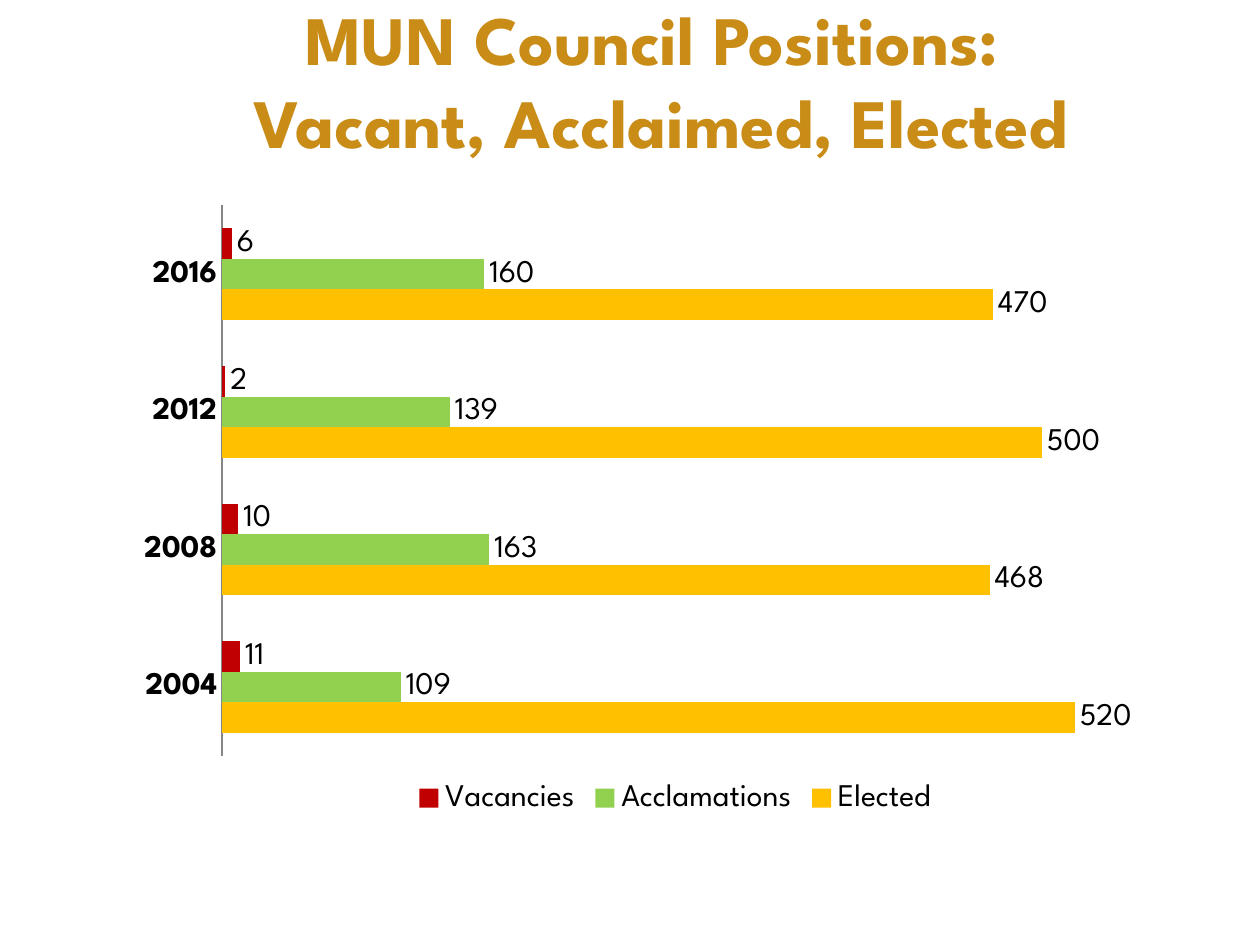
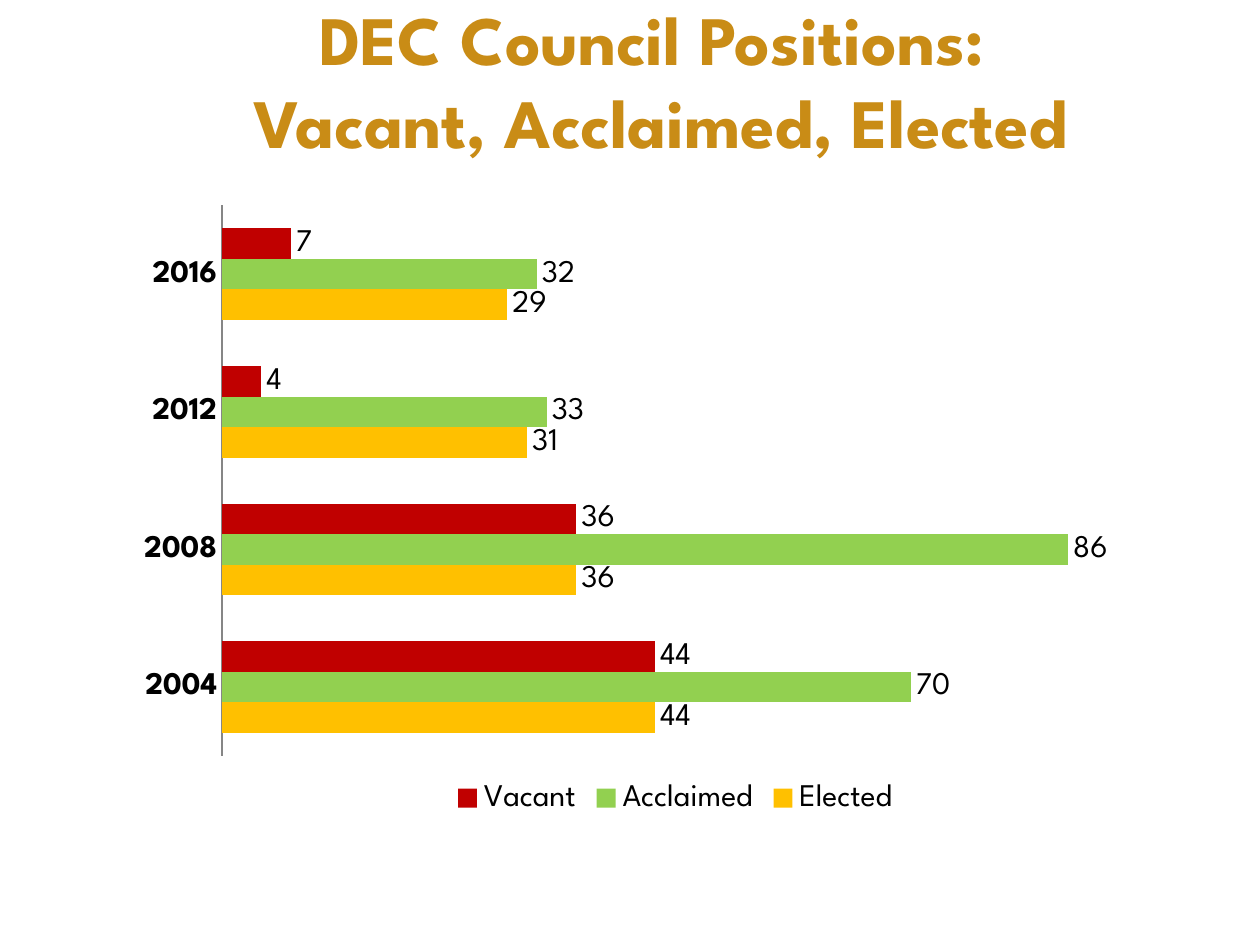
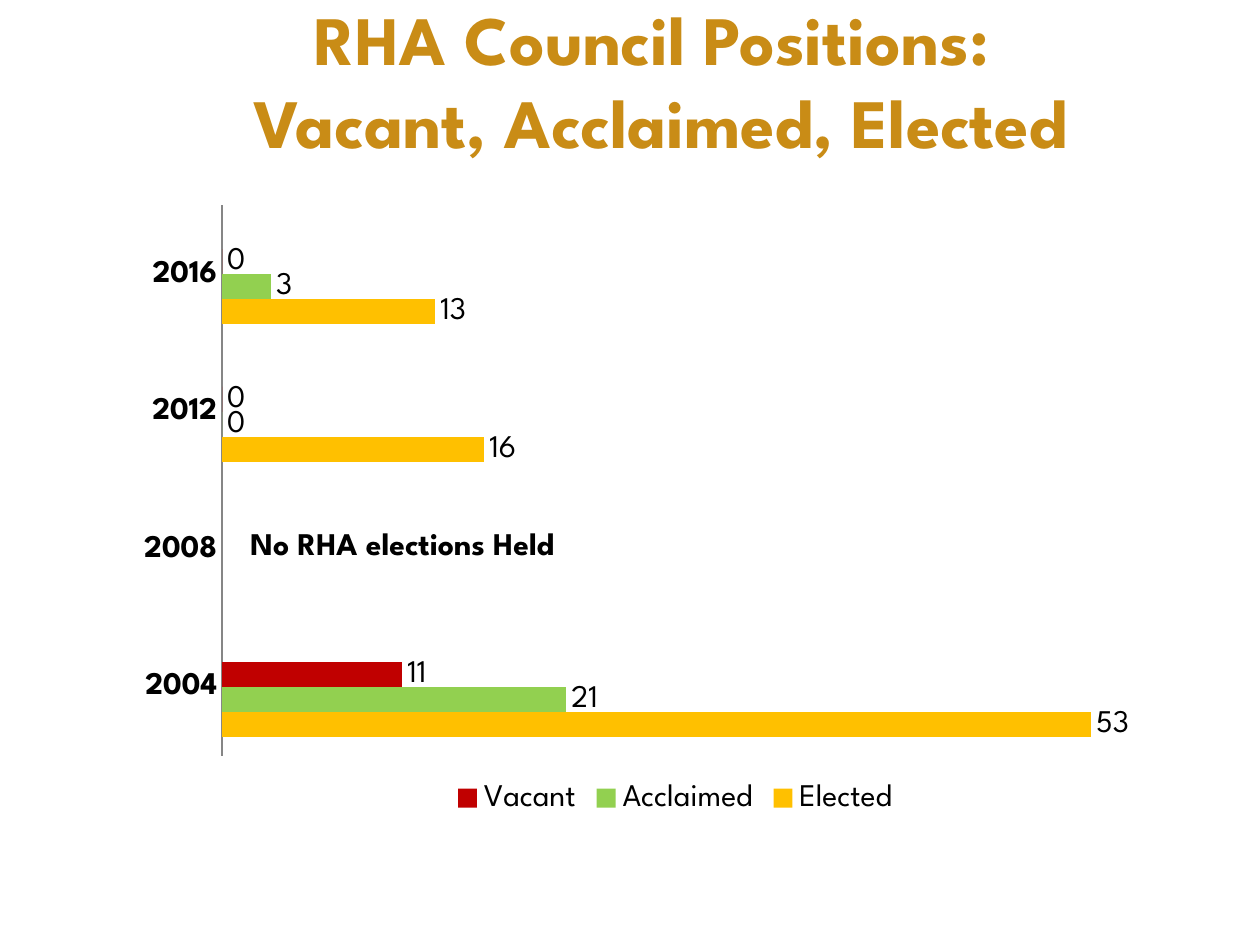
from dataclasses import dataclass

from lxml import etree
from pptx import Presentation
from pptx.chart.data import CategoryChartData
from pptx.dml.color import RGBColor
from pptx.enum.chart import XL_CHART_TYPE, XL_LABEL_POSITION, XL_LEGEND_POSITION, XL_TICK_MARK
from pptx.enum.text import MSO_ANCHOR, MSO_AUTO_SIZE, PP_ALIGN
from pptx.oxml.ns import qn
from pptx.util import Cm, Pt

BAR_CLUSTERED = XL_CHART_TYPE.BAR_CLUSTERED
OUTSIDE_END = XL_LABEL_POSITION.OUTSIDE_END
LEGEND_BOTTOM = XL_LEGEND_POSITION.BOTTOM
NO_TICKS = XL_TICK_MARK.NONE
MIDDLE = MSO_ANCHOR.MIDDLE
NO_AUTOFIT = MSO_AUTO_SIZE.NONE
CENTER = PP_ALIGN.CENTER

TYPEFACE = "League Spartan"
GOLD, BLACK, AXIS_GRAY = "C98C16", "000000", "868686"
SERIES_COLORS = ("FFC000", "92D050", "C00000", "8064A2")
YEARS = ("2004", "2008", "2012", "2016")
TITLE_BOX = (1.9, 0, 22.86, 3.18)
CHART_BOX = (2.46, 3.89, 22.3, 12.62)


@dataclass
class Council:
    """Election results of one council, oldest year first."""
    name: str
    results: dict
    axis_maximum: int
    note: str = ""


COUNCILS = (
    Council("MUN", {
        "Elected": (520, 468, 500, 470),
        "Acclamations": (109, 163, 139, 160),
        "Vacancies": (11, 10, 2, 6),
    }, 600),
    Council("DEC", {
        "Elected": (44, 36, 31, 29),
        "Acclaimed": (70, 86, 33, 32),
        "Vacant": (44, 36, 4, 7),
    }, 100),
    Council("RHA", {
        "Elected": (53, None, 16, 13),
        "Acclaimed": (21, None, 0, 3),
        "Vacant": (11, None, 0, 0),
        "#REF!": (None,) * len(YEARS),
    }, 60, "No RHA elections Held"),
)


def color(hex_code):
    """Return the colour for a hex string."""
    return RGBColor.from_string(hex_code)


def style_font(font, size, hex_code, bold=False):
    """Apply the deck typeface with a size, colour and weight."""
    font.name = TYPEFACE
    font.size = Pt(size)
    font.bold = bold
    font.color.rgb = color(hex_code)


def add_heading(slide, box, council_name):
    """Place the two-line title."""
    heading = slide.shapes.title
    heading.left, heading.top, heading.width, heading.height = map(Cm, box)
    frame = heading.text_frame
    frame.text = f"{council_name} Council Positions: \vVacant, Acclaimed, Elected"
    frame.auto_size = NO_AUTOFIT
    frame.vertical_anchor = MIDDLE
    paragraph = frame.paragraphs[0]
    paragraph.alignment = CENTER
    style_font(paragraph.font, 39.6, GOLD, bold=True)


def format_axes(chart, maximum):
    """Show bold years on a thin line and hide the value axis."""
    years = chart.category_axis
    years.major_tick_mark = years.minor_tick_mark = NO_TICKS
    years.format.line.color.rgb = color(AXIS_GRAY)
    years.format.line.width = Pt(0.75)
    style_font(years.tick_labels.font, 18, BLACK, bold=True)
    counts = chart.value_axis
    counts.minimum_scale, counts.maximum_scale = 0, maximum
    counts.has_major_gridlines = False
    counts.visible = False


def format_legend(chart, hide_first):
    """Put the legend below the bars, leaving out its first entry on request."""
    chart.has_legend = True
    legend = chart.legend
    legend.position = LEGEND_BOTTOM
    legend.include_in_layout = False
    style_font(legend.font, 18, BLACK)
    if hide_first:
        entry = etree.Element(qn("c:legendEntry"))
        etree.SubElement(entry, qn("c:idx"), val="0")
        etree.SubElement(entry, qn("c:delete"), val="1")
        legend._element.insert(1, entry)


def add_results_chart(slide, box, council):
    """Draw the clustered bars of one council."""
    data = CategoryChartData()
    data.categories = YEARS
    for outcome, counts in council.results.items():
        data.add_series(outcome, counts)
    chart = slide.shapes.add_chart(BAR_CLUSTERED, *map(Cm, box), data).chart
    chart.has_title = False
    style_font(chart.font, 18, BLACK)
    plot = chart.plots[0]
    plot.gap_width = 150
    plot.vary_by_categories = False
    for outcome, hex_code in zip(plot.series, SERIES_COLORS):
        outcome.format.fill.solid()
        outcome.format.fill.fore_color.rgb = color(hex_code)
        if any(count is not None for count in outcome.values):
            labels = outcome.data_labels
            labels.show_value = True
            labels.position = OUTSIDE_END
            style_font(labels.font, 18, BLACK)
    format_axes(chart, council.axis_maximum)
    format_legend(chart, hide_first=len(council.results) > 3)


def add_note(slide, chart_box, note):
    """Write a remark in the empty 2008 row of the chart."""
    left, top = chart_box[:2]
    remark = slide.shapes.add_textbox(Cm(left + 2.34), Cm(top + 6.55), Cm(8.51), Cm(1.02))
    frame = remark.text_frame
    frame.word_wrap = True
    frame.text = note
    style_font(frame.paragraphs[0].font, 18, BLACK, bold=True)


def add_council_slide(presentation, council):
    """Build the slide of one council."""
    slide = presentation.slides.add_slide(presentation.slide_layouts[5])
    add_heading(slide, TITLE_BOX, council.name)
    add_results_chart(slide, CHART_BOX, council)
    if council.note:
        add_note(slide, CHART_BOX, council.note)


def main():
    """Build and save the deck."""
    presentation = Presentation()
    presentation.slide_width, presentation.slide_height = Cm(25.4), Cm(19.05)
    for council in COUNCILS:
        add_council_slide(presentation, council)
    presentation.save("out.pptx")


if __name__ == "__main__":
    main()
